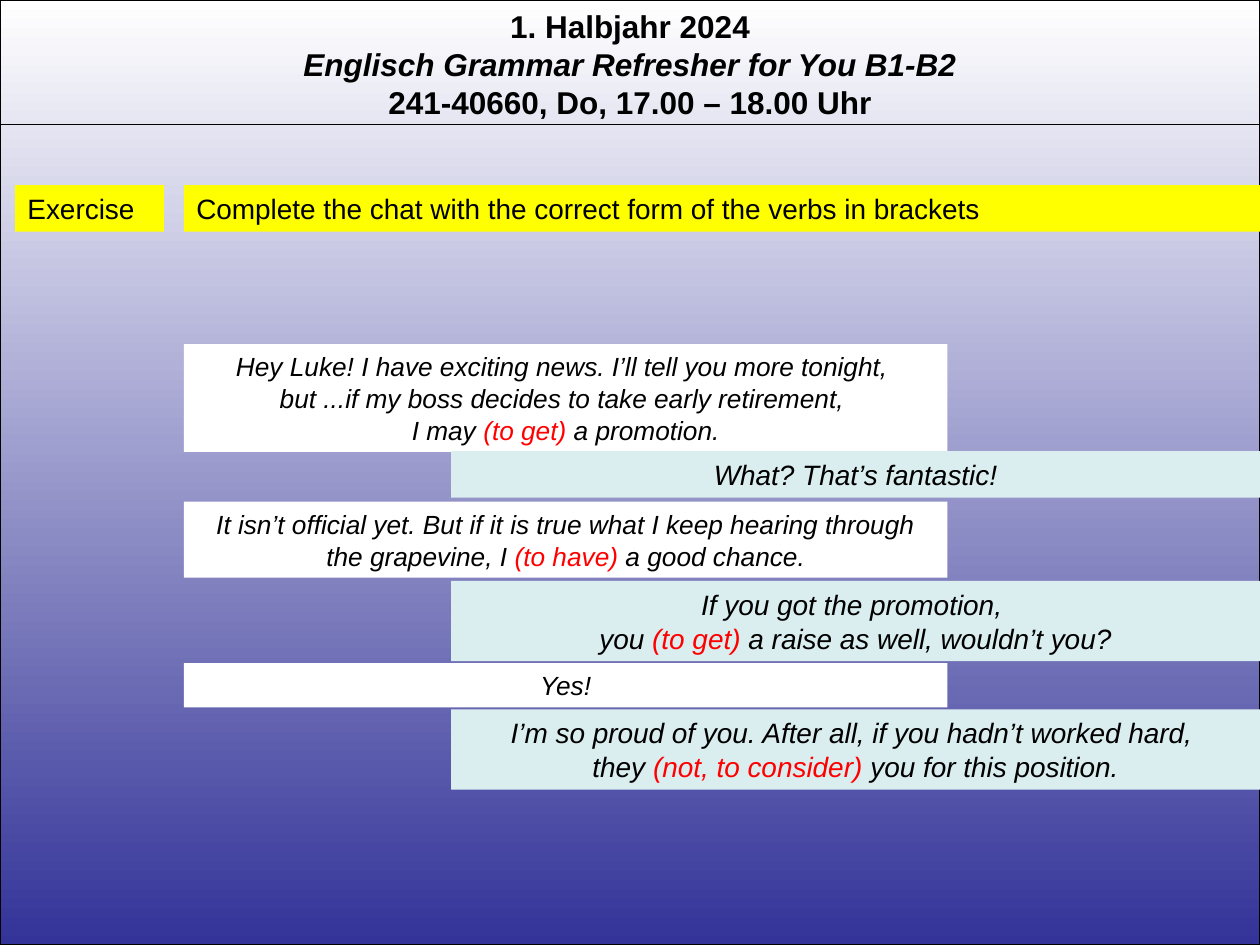
from lxml.etree import SubElement
from pptx import Presentation
from pptx.dml.color import RGBColor
from pptx.enum.shapes import MSO_CONNECTOR, MSO_SHAPE
from pptx.enum.text import MSO_ANCHOR, MSO_AUTO_SIZE, PP_ALIGN
from pptx.oxml.ns import qn
from pptx.util import Pt

WIDE, HIGH = 720, 540
PITCH = 1.21  # line height as a share of the text size
PAD = 7.2     # top and bottom inset together
EDGE = 105.1  # left side of the task and of the white messages

WHITE = dict(left=EDGE, width=436.3, size=15, fill="FFFFFF")
TEAL = dict(left=257.8, width=WIDE - 257.8, size=16, fill="DAEDEF")

# Verbs to fill in stand between bars.
CHAT = [
    (WHITE, 196.6, "Hey Luke! I have exciting news. I’ll tell you more tonight, \n"
                   "but ...if my boss decides to take early retirement, \n"
                   "I may |(to get) |a promotion.", 3),
    (TEAL, 257.8, "What? That’s fantastic!", 1),
    (WHITE, 286.6, "It isn’t official yet. But if it is true what I keep hearing "
                   "through the grapevine, I |(to have) |a good chance.", 2),
    (TEAL, 331.9, "If you got the promotion, \n"
                  "you |(to get) |a raise as well, wouldn’t you?", 2),
    (WHITE, 378.9, "Yes!", 1),
    (TEAL, 405.4, "I’m so proud of you. After all, if you hadn’t worked hard, \n"
                  "they |(not, to consider) |you for this position.", 2),
]


def color(code):
    return RGBColor.from_string(code)


def style(para, size, align):
    para.alignment = align
    para.line_spacing = Pt(size * PITCH)
    for run in para.runs:
        run.font.name = "Arial"
        run.font.size = Pt(size)


def place(shape, left, top, width, height):
    shape.left, shape.top = Pt(left), Pt(top)
    shape.width, shape.height = Pt(width), Pt(height)


def add_rect(slide, left, top, width, height):
    rect = slide.shapes.add_shape(
        MSO_SHAPE.RECTANGLE, Pt(left), Pt(top), Pt(width), Pt(height))
    rect.shadow.inherit = False
    return rect


def add_back(slide):
    """Put the framed gradient behind everything else."""
    rect = add_rect(slide, 0, 0, WIDE, HIGH)
    rect.fill.gradient()
    rect.fill.gradient_angle = 270
    for stop, code in zip(rect.fill.gradient_stops, ("FFFFFF", "333399")):
        stop.color.rgb = color(code)
    rect.line.color.rgb = color("000000")
    rect.line.width = Pt(0.75)
    slide.shapes._spTree.insert(2, rect._element)


def add_head(slide):
    title = slide.shapes.title
    place(title, 0, 0, WIDE, 72.7)
    frame = title.text_frame
    frame.text = ("1. Halbjahr 2024\nEnglisch Grammar Refresher for You B1-B2\n"
                  "241-40660, Do, 17.00 – 18.00 Uhr")
    frame.auto_size = MSO_AUTO_SIZE.NONE
    frame.vertical_anchor = MSO_ANCHOR.TOP
    for row, para in enumerate(frame.paragraphs):
        style(para, 18, PP_ALIGN.CENTER)
        for run in para.runs:
            run.font.bold = True
            run.font.italic = row == 1
            run.font.color.rgb = color("000000")


def add_rule(slide, top):
    rule = slide.shapes.add_connector(
        MSO_CONNECTOR.STRAIGHT, 0, Pt(top), Pt(WIDE), Pt(top))
    rule.line.color.rgb = color("000000")
    rule.line.width = Pt(0.75)
    SubElement(rule._element.spPr, qn("a:effectLst"))


def add_box(slide, text, top, left, width, size, fill,
            rows=1, align=PP_ALIGN.CENTER, italic=True):
    """Add a filled box as high as its rows; text between bars is red."""
    box = add_rect(slide, left, top, width, rows * size * PITCH + PAD)
    box.fill.solid()
    box.fill.fore_color.rgb = color(fill)
    box.line.fill.background()
    frame = box.text_frame
    frame.word_wrap = True
    frame.vertical_anchor = MSO_ANCHOR.TOP
    frame.text = text
    for para in frame.paragraphs:
        parts = para.text.split("|")
        para.clear()
        for spot, part in enumerate(parts):
            run = para.add_run()
            run.text = part
            run.font.italic = italic
            run.font.color.rgb = color("FF0000" if spot % 2 else "000000")
        style(para, size, align)


def main():
    deck = Presentation()
    deck.slide_width, deck.slide_height = Pt(WIDE), Pt(HIGH)
    slide = deck.slides.add_slide(deck.slide_layouts[5])
    add_back(slide)
    add_head(slide)
    add_rule(slide, 71.3)
    for text, left, width in (
            ("Exercise", 8.6, 85),
            ("Complete the chat with the correct form of the verbs in brackets",
             EDGE, WIDE - EDGE)):
        add_box(slide, text, 105.8, left, width, 16, "FFFF00",
                align=PP_ALIGN.LEFT, italic=False)
    for side, top, text, rows in CHAT:
        add_box(slide, text, top, rows=rows, **side)
    deck.save("out.pptx")


if __name__ == "__main__":
    main()
